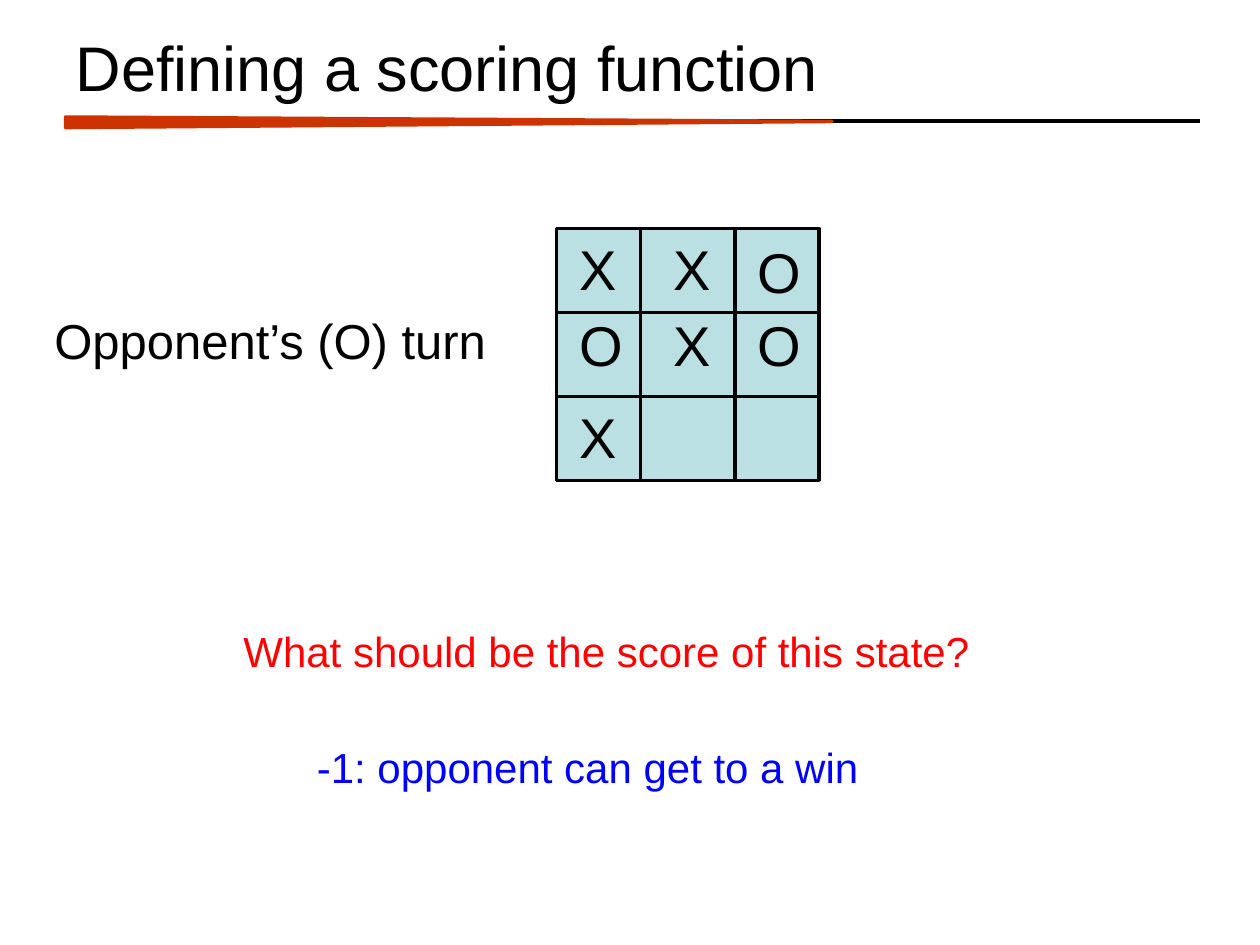
from lxml.etree import SubElement
from pptx import Presentation
from pptx.dml.color import RGBColor as Rgb
from pptx.enum.shapes import MSO_CONNECTOR as Link, MSO_SHAPE as Form
from pptx.enum.text import MSO_ANCHOR as Anchor, MSO_AUTO_SIZE as Fit, PP_ALIGN as Align
from pptx.oxml.ns import qn
from pptx.util import Inches, Pt

COLS, ROWS = 120, 90


def tint(code):
    """Turn a hex string into a colour."""
    return Rgb.from_string(code)


def put(item, style):
    """Set every attribute named in the style."""
    for name, value in style.items():
        setattr(item, name, value)


class Board:
    """Hold the style and the current slide."""

    font = "Arial"
    ink = "000000"
    weight = 2

    def __init__(self):
        """Open a deck with one title-only slide."""
        self.deck = Presentation()
        put(self.deck, {"slide_width": Inches(10), "slide_height": Inches(7.5)})
        self.slide = self.deck.slides.add_slide(self.deck.slide_layouts[5])
        self.shapes = self.slide.shapes

    def span(self, *cells):
        """Turn alternating columns and rows into lengths."""
        units = self.deck.slide_width / COLS, self.deck.slide_height / ROWS
        return [round(cell * units[i % 2]) for i, cell in enumerate(cells)]

    def label(self, frame, words, size, color, **style):
        """Fill a text frame with one formatted line."""
        put(frame, style)
        line = frame.paragraphs[0]
        line.alignment = Align.LEFT
        run = line.add_run()
        run.text = words
        put(run.font, {"name": self.font, "size": Pt(size)})
        run.font.color.rgb = tint(color)

    def title(self, words, box, size):
        """Place and format the title."""
        head = self.shapes.title
        put(head, dict(zip(("left", "top", "width", "height"), self.span(*box))))
        self.label(head.text_frame, words, size, self.ink,
                   vertical_anchor=Anchor.MIDDLE, word_wrap=True, auto_size=Fit.NONE)

    def text(self, words, box, size, color=ink, wrap=False):
        """Add a text box."""
        frame = self.shapes.add_textbox(*self.span(*box)).text_frame
        self.label(frame, words, size, color,
                   word_wrap=wrap, auto_size=Fit.SHAPE_TO_FIT_TEXT)

    def shape(self, form, box, fill, edge=ink, turn=0):
        """Add a filled shape and return it."""
        item = self.shapes.add_shape(form, *self.span(*box))
        item.shadow.inherit = False
        item.rotation = turn
        item.fill.solid()
        item.fill.fore_color.rgb = tint(fill)
        self.edge(item, edge)
        return item

    def line(self, *ends):
        """Add a straight line."""
        item = self.shapes.add_connector(Link.STRAIGHT, *self.span(*ends))
        self.edge(item, self.ink)
        SubElement(item._element.spPr, qn("a:effectLst"))

    def edge(self, item, color):
        """Set the colour and weight of an outline."""
        item.line.color.rgb = tint(color)
        item.line.width = Pt(self.weight)


def main():
    """Build and save the slide."""
    board = Board()
    board.line(6.25, 11.55, 114.25, 11.55)
    wedge = board.shape(Form.ISOSCELES_TRIANGLE, (42.25, -24.85, 1, 73),
                        "CC3300", "CC3300", 90)
    wedge.adjustments[0] = 0.42
    board.title("Defining a scoring function", (6, 2, 108, 8.65), 36)

    board.text("Opponent’s (O) turn", (4, 29, 44, 6.85), 28)
    board.text("What should be the score of this state?", (22, 59, 72.25, 6), 24, "FF0000")
    board.text("-1: opponent can get to a win", (29, 70, 54.5, 6), 24, "0000FF")

    left, top, wide, high = 53, 21.75, 25, 24
    board.shape(Form.RECTANGLE, (left, top, wide, high), "BBE0E3")
    for col in (left + 8, left + 17):
        board.line(col, top, col, top + high)
    for row in (top + high / 3, top + high * 2 / 3):
        board.line(left, row, left + wide, row)

    marks = ("XXO", "OXO", "X")
    for row, signs in zip((top, 29, 37.7), marks):
        for col, sign in zip((54, 63, 71), signs):
            drop = 0.25 if (row, col) == (top, 71) else 0
            board.text(sign, (col, row + drop, 8, 7.65), 32, wrap=True)
    board.deck.save("out.pptx")


if __name__ == "__main__":
    main()
